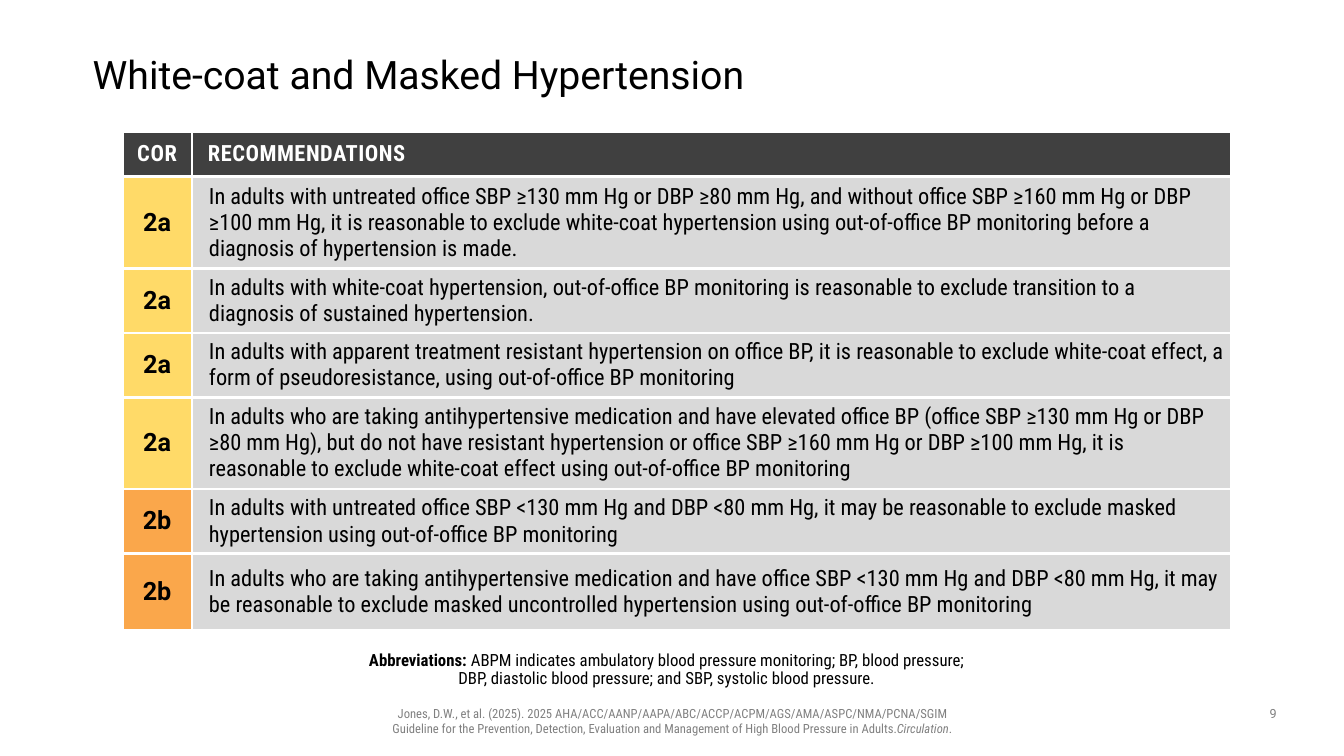
from dataclasses import dataclass

from lxml import etree
from pptx import Presentation
from pptx.dml.color import RGBColor
from pptx.enum.text import MSO_ANCHOR, PP_ALIGN
from pptx.oxml.ns import qn
from pptx.util import Pt

LEFT, CENTER = PP_ALIGN.LEFT, PP_ALIGN.CENTER
TOP, MIDDLE, BOTTOM = MSO_ANCHOR.TOP, MSO_ANCHOR.MIDDLE, MSO_ANCHOR.BOTTOM

COLORS = {
    "black": "000000",
    "white": "FFFFFF",
    "muted": "808080",
    "header": "404040",
    "body": "D9D9D9",
    "2a": "FFDA68",
    "2b": "FAA74B",
}
PLAIN, CONDENSED = "Roboto", "Roboto Condensed"
BORDER_WIDTH = 2.25
COLUMN_WIDTHS = (49.68, 742.32)
HEADER_HEIGHT = 32.4


@dataclass(frozen=True)
class Recommendation:
    grade: str
    height: float
    text: str


@dataclass(frozen=True)
class Span:
    text: str
    bold: bool = False
    italic: bool = False


RECOMMENDATIONS = (
    Recommendation("2a", 65.52, "In adults with untreated office SBP ≥130 mm Hg or DBP ≥80 mm Hg, and without office SBP ≥160 mm Hg or DBP ≥100 mm Hg, it is reasonable to exclude white-coat hypertension using out-of-office BP monitoring before a diagnosis of hypertension is made."),
    Recommendation("2a", 46.08, "In adults with white-coat hypertension, out-of-office BP monitoring is reasonable to exclude transition to a diagnosis of sustained hypertension."),
    Recommendation("2a", 46.08, "In adults with apparent treatment resistant hypertension on office BP, it is reasonable to exclude white-coat effect, a form of pseudoresistance, using out-of-office BP monitoring"),
    Recommendation("2a", 65.52, "In adults who are taking antihypertensive medication and have elevated office BP (office SBP ≥130 mm Hg or DBP ≥80 mm Hg), but do not have resistant hypertension or office SBP ≥160 mm Hg or DBP ≥100 mm Hg, it is reasonable to exclude white-coat effect using out-of-office BP monitoring"),
    Recommendation("2b", 46.08, "In adults with untreated office SBP <130 mm Hg and DBP <80 mm Hg, it may be reasonable to exclude masked hypertension using out-of-office BP monitoring"),
    Recommendation("2b", 54.72, "In adults who are taking antihypertensive medication and have office SBP <130 mm Hg and DBP <80 mm Hg, it may be reasonable to exclude masked uncontrolled hypertension using out-of-office BP monitoring"),
)

ABBREVIATIONS = (
    Span("Abbreviations: ", bold=True),
    Span("ABPM indicates ambulatory blood pressure monitoring; BP, blood pressure;\nDBP, diastolic blood pressure; and SBP, systolic blood pressure."),
)
CITATION = (
    Span("Jones, D.W., et al. (2025). 2025 AHA/ACC/AANP/AAPA/ABC/ACCP/ACPM/AGS/AMA/ASPC/NMA/PCNA/SGIM\nGuideline for the Prevention, Detection, Evaluation and Management of High Blood Pressure in Adults."),
    Span("Circulation", italic=True),
    Span("."),
)


def write(frame, *spans: Span, size: float, font: str = CONDENSED, color: str = "black",
          align=LEFT, line_spacing: float = 1.0, tracking: float = 0) -> None:
    para = frame.paragraphs[0]
    para.alignment = align
    para.line_spacing = line_spacing
    for span in spans:
        for index, line in enumerate(span.text.split("\n")):
            if index:
                para.add_line_break()
            run = para.add_run()
            run.text = line
            run.font.size = Pt(size)
            run.font.name = font
            run.font.bold = span.bold
            run.font.italic = span.italic
            run.font.color.rgb = RGBColor.from_string(COLORS[color])
            if tracking:
                run._r.get_or_add_rPr().set("spc", str(round(tracking * 100)))


def add_text(page, bounds: tuple, *spans: Span, margins: tuple = (7.2, 3.6, 7.2, 3.6),
             anchor=TOP, **text_format) -> None:
    box = page.shapes.add_textbox(*map(Pt, bounds))
    frame = box.text_frame
    frame.word_wrap = True
    frame.vertical_anchor = anchor
    (frame.margin_left, frame.margin_top,
     frame.margin_right, frame.margin_bottom) = map(Pt, margins)
    write(frame, *spans, **text_format)


def add_borders(cell) -> None:
    properties = cell._tc.get_or_add_tcPr()
    for side in ("lnL", "lnR", "lnT", "lnB"):
        line = etree.SubElement(properties, qn(f"a:{side}"), w=str(Pt(BORDER_WIDTH)))
        fill = etree.SubElement(line, qn("a:solidFill"))
        etree.SubElement(fill, qn("a:srgbClr"), val=COLORS["white"])


def fill_cell(cell, text: str, fill: str, margins: tuple, bold: bool = False,
              **text_format) -> None:
    add_borders(cell)
    cell.fill.solid()
    cell.fill.fore_color.rgb = RGBColor.from_string(COLORS[fill])
    cell.vertical_anchor = MIDDLE
    (cell.margin_left, cell.margin_top,
     cell.margin_right, cell.margin_bottom) = map(Pt, margins)
    write(cell.text_frame, Span(text, bold=bold), **text_format)


def add_recommendations(page) -> None:
    heights = [HEADER_HEIGHT] + [item.height for item in RECOMMENDATIONS]
    table = page.shapes.add_table(
        len(heights), len(COLUMN_WIDTHS), Pt(87.4), Pt(93.8),
        Pt(sum(COLUMN_WIDTHS)), Pt(sum(heights))).table
    for column, width in zip(table.columns, COLUMN_WIDTHS):
        column.width = Pt(width)
    for row, height in zip(table.rows, heights):
        row.height = Pt(height)

    header_format = dict(fill="header", bold=True, size=16, color="white")
    fill_cell(table.cell(0, 0), "COR", margins=(7.2, 3.6, 7.2, 3.6),
              align=CENTER, tracking=0.5, **header_format)
    fill_cell(table.cell(0, 1), "RECOMMENDATIONS", margins=(11.5, 3.6, 7.2, 3.6),
              tracking=0.4, **header_format)
    for row, item in enumerate(RECOMMENDATIONS, start=1):
        fill_cell(table.cell(row, 0), item.grade, fill=item.grade, margins=(3.6,) * 4,
                  bold=True, size=18, font=PLAIN, align=CENTER)
        fill_cell(table.cell(row, 1), item.text, fill="body",
                  margins=(12.24, 3.6, 3.6, 3.6), size=16)


def main() -> None:
    deck = Presentation()
    deck.slide_width, deck.slide_height = Pt(960), Pt(540)
    page = deck.slides.add_slide(deck.slide_layouts[6])
    add_text(page, (66.24, 28.8, 828, 51.84), Span("White-coat and Masked Hypertension"),
             margins=(0,) * 4, anchor=MIDDLE, size=28, font=PLAIN, line_spacing=0.9)
    add_recommendations(page)
    add_text(page, (135.36, 462.24, 689.04, 33.12), *ABBREVIATIONS,
             margins=(0, 3.6, 7.2, 3.6), anchor=BOTTOM, size=12, align=CENTER,
             line_spacing=0.9)
    add_text(page, (169.92, 500.4, 620.64, 28.8), *CITATION,
             size=9, color="muted", align=CENTER)
    add_text(page, (894.24, 500.4, 30.24, 18.72), Span("9"),
             size=9, font=PLAIN, color="muted", align=CENTER)
    deck.save("out.pptx")


if __name__ == "__main__":
    main()
